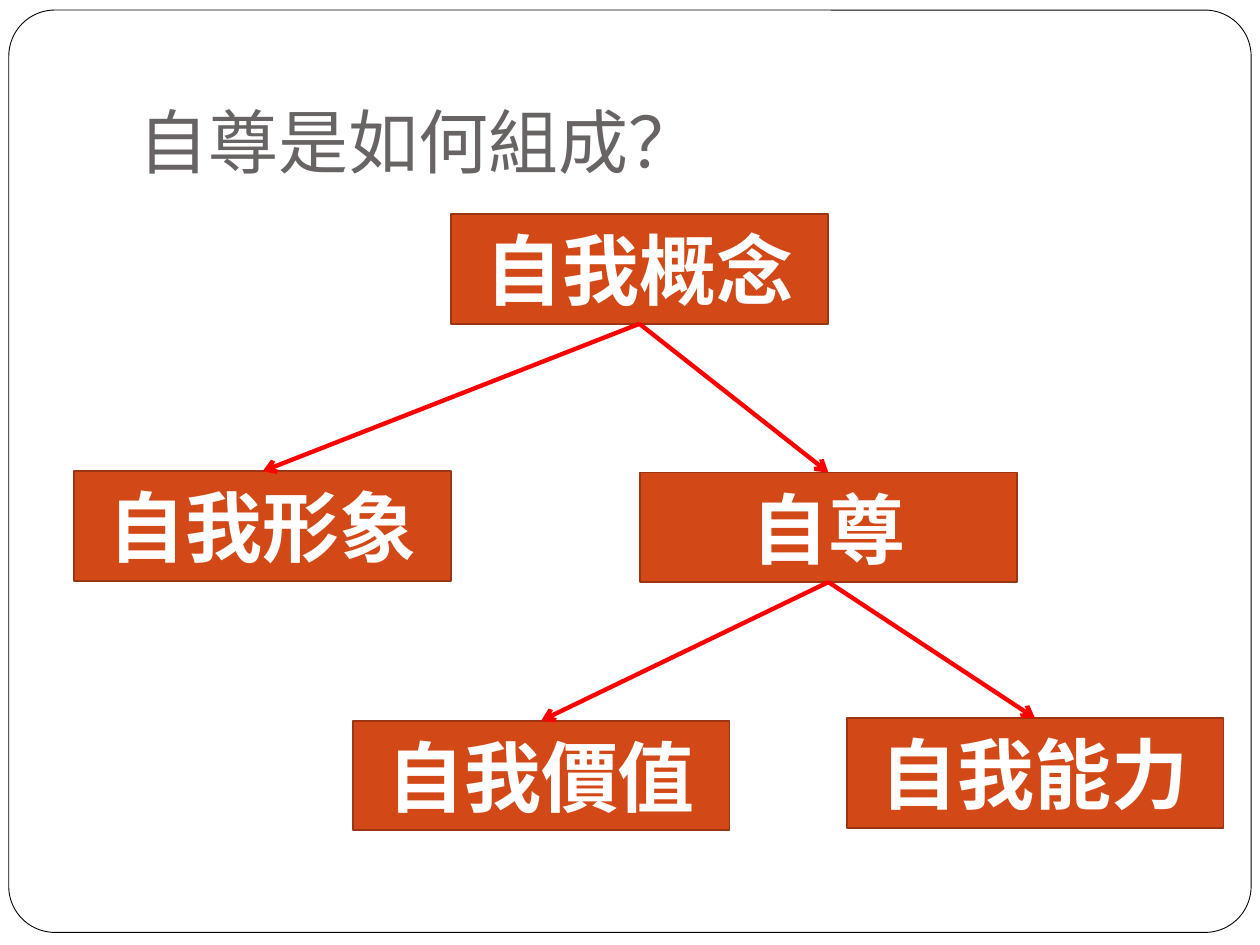
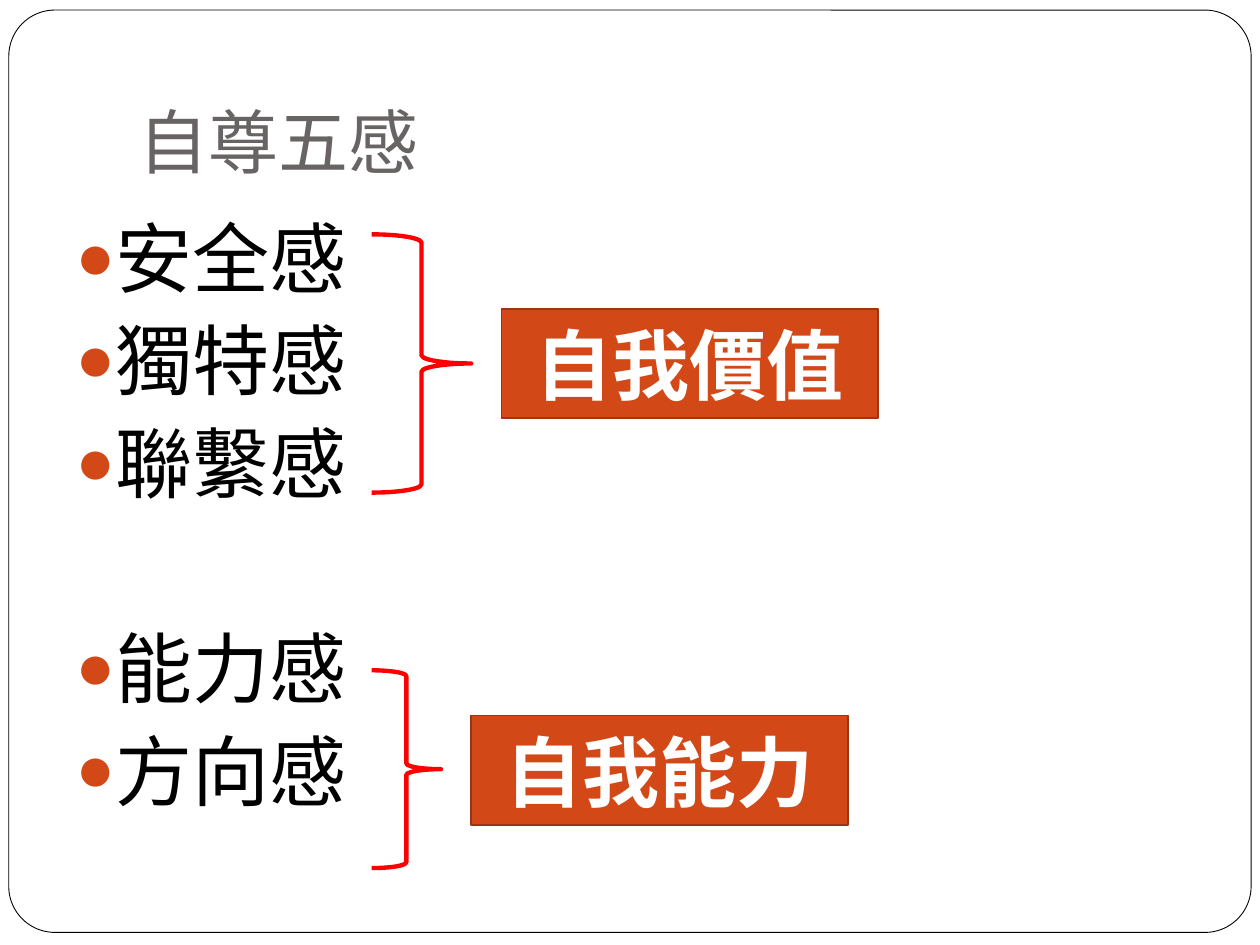
from lxml.etree import SubElement
from pptx import Presentation
from pptx.dml.color import RGBColor
from pptx.enum.shapes import MSO_CONNECTOR, MSO_SHAPE
from pptx.enum.text import MSO_ANCHOR, MSO_AUTO_SIZE, PP_ALIGN
from pptx.oxml.ns import qn
from pptx.util import Inches, Pt

TITLE_ONLY, TITLE_AND_CONTENT = 5, 1
TOP_SITE, BOTTOM_SITE = 0, 2
BOX_WIDTH, BOX_HEIGHT = 2.99, 0.87
LIST_SPACING = 5.8
LIST_ROW = 58.6


def color(hex_string):
    return RGBColor.from_string(hex_string)


class Deck:
    WHITE, BLACK, GREY = "FFFFFF", "000000", "696464"
    ORANGE, BROWN, RED = "D34817", "9C3511", "FF0000"
    TITLE_FONT, BODY_FONT = "Lato", "Times New Roman"

    def __init__(self):
        self.presentation = Presentation()
        self.presentation.slide_width = Inches(10)
        self.presentation.slide_height = Inches(7.5)
        self.slide = None

    def add_slide(self, layout, title):
        layouts = self.presentation.slide_layouts
        self.slide = self.presentation.slides.add_slide(layouts[layout])
        shape = self.slide.shapes.title
        self.place(shape, 1, 0.3, 8.5, 1.25)
        frame = shape.text_frame
        frame.auto_size = MSO_AUTO_SIZE.NONE
        frame.vertical_anchor = MSO_ANCHOR.BOTTOM
        frame.margin_bottom = Inches(0.1)
        paragraph = frame.paragraphs[0]
        paragraph.alignment = PP_ALIGN.LEFT
        self.run(paragraph, title, 40, self.TITLE_FONT, self.GREY)

    def place(self, shape, left, top, width, height):
        shape.left, shape.top = Inches(left), Inches(top)
        shape.width, shape.height = Inches(width), Inches(height)

    def run(self, paragraph, text, size, font, hex_string, bold=False):
        run = paragraph.add_run()
        run.text = text
        run.font.size = Pt(size)
        run.font.name = font
        run.font.bold = bold
        run.font.color.rgb = color(hex_string)

    def shape(self, kind, left, top, width, height, fill, line, line_width):
        shape = self.slide.shapes.add_shape(
            kind, Inches(left), Inches(top), Inches(width), Inches(height))
        shape.shadow.inherit = False
        if fill:
            shape.fill.solid()
            shape.fill.fore_color.rgb = color(fill)
        else:
            shape.fill.background()
        shape.line.color.rgb = color(line)
        shape.line.width = Pt(line_width)
        return shape

    def master_frame(self):
        """Draw the rounded frame and move it to the back of the slide master."""
        frame = self.shape(MSO_SHAPE.ROUNDED_RECTANGLE, 0.07, 0.08, 9.86, 7.32,
                           self.WHITE, self.BLACK, 0.5)
        frame.adjustments[0] = 0.05
        frame.element.nvSpPr.cNvPr.set("id", "100")
        self.presentation.slide_master.shapes.element.insert(2, frame.element)

    def box(self, text, left, top):
        box = self.shape(MSO_SHAPE.RECTANGLE, left, top, BOX_WIDTH, BOX_HEIGHT,
                         self.ORANGE, self.BROWN, 1)
        box.text_frame.vertical_anchor = MSO_ANCHOR.MIDDLE
        paragraph = box.text_frame.paragraphs[0]
        paragraph.alignment = PP_ALIGN.CENTER
        self.run(paragraph, text, 44, self.BODY_FONT, self.WHITE, bold=True)
        return box

    def brace(self, left, top, width, height):
        self.shape(MSO_SHAPE.RIGHT_BRACE, left, top, width, height,
                   None, self.RED, 2.5)

    def arrow(self, parent, child):
        arrow = self.slide.shapes.add_connector(MSO_CONNECTOR.STRAIGHT, 0, 0, 0, 0)
        arrow.begin_connect(parent, BOTTOM_SITE)
        arrow.end_connect(child, TOP_SITE)
        arrow.line.color.rgb = color(self.RED)
        arrow.line.width = Pt(2.5)
        SubElement(arrow.line._get_or_add_ln(), qn("a:tailEnd"), type="arrow")
        SubElement(arrow.element.spPr, qn("a:effectLst"))

    def bullet_groups(self, groups):
        """Fill the body with bullets, leaving one row free between groups."""
        body = self.slide.placeholders[1]
        self.place(body, 0.5, 1.62, 9, 4.95)
        frame = body.text_frame
        frame.auto_size = MSO_AUTO_SIZE.NONE
        paragraph = frame.paragraphs[0]
        for group_index, group in enumerate(groups):
            for item_index, text in enumerate(group):
                if group_index or item_index:
                    paragraph = frame.add_paragraph()
                starts_later_group = group_index > 0 and item_index == 0
                gap = LIST_ROW if starts_later_group else 0
                paragraph.space_before = Pt(LIST_SPACING + gap)
                self.bullet(paragraph)
                self.run(paragraph, text, 44, self.BODY_FONT, self.BLACK)

    def bullet(self, paragraph):
        properties = paragraph._p.get_or_add_pPr()
        properties.set("marL", str(Inches(0.3)))
        properties.set("indent", str(-Inches(0.3)))
        bullet_color = SubElement(properties, qn("a:buClr"))
        SubElement(bullet_color, qn("a:srgbClr"), val=self.ORANGE)
        SubElement(properties, qn("a:buSzPct"), val="85000")
        SubElement(properties, qn("a:buChar"), char="●")


def build_composition(deck):
    deck.add_slide(TITLE_ONLY, "自尊是如何組成？")
    deck.master_frame()
    concept = deck.box("自我概念", 3.58, 1.7)
    image = deck.box("自我形象", 0.59, 3.74)
    esteem = deck.box("自尊", 5.08, 3.75)
    worth = deck.box("自我價值", 2.8, 5.72)
    ability = deck.box("自我能力", 6.72, 5.7)
    for parent, child in ((concept, image), (concept, esteem),
                          (esteem, ability), (esteem, worth)):
        deck.arrow(parent, child)


def build_five_senses(deck):
    deck.add_slide(TITLE_AND_CONTENT, "自尊五感")
    deck.bullet_groups((("安全感", "獨特感", "聯繫感"), ("能力感", "方向感")))
    deck.brace(2.95, 1.86, 0.79, 2.05)
    deck.brace(2.95, 5.32, 0.55, 1.57)
    deck.box("自我價值", 3.98, 2.45)
    deck.box("自我能力", 3.74, 5.68)


def main():
    deck = Deck()
    build_composition(deck)
    build_five_senses(deck)
    deck.presentation.save("out.pptx")


if __name__ == "__main__":
    main()
